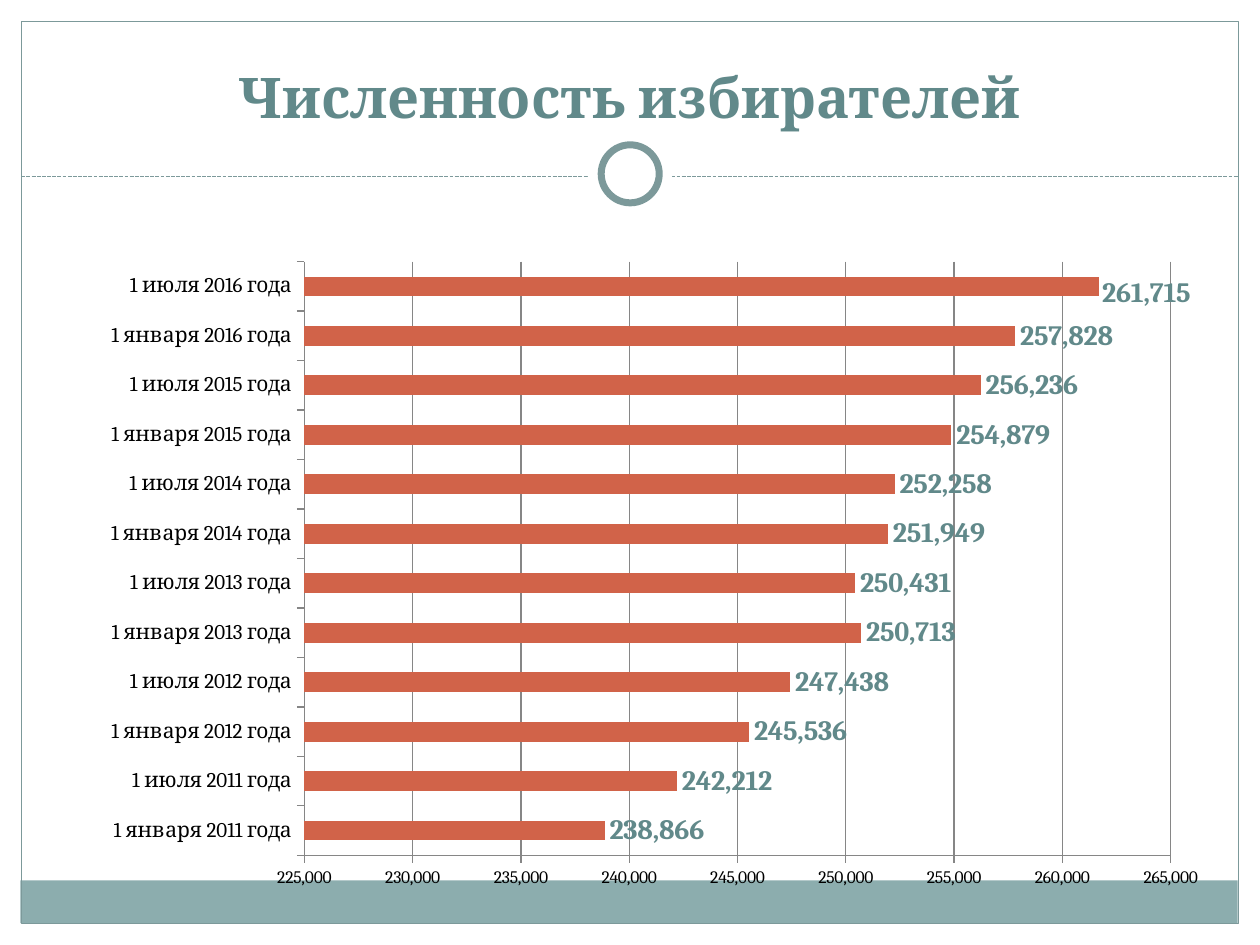
from lxml import etree
from pptx import Presentation
from pptx import util as u
from pptx.chart import data as cd
from pptx.dml import color as dc
from pptx.enum import chart as ec, dml, shapes, text
from pptx.oxml import ns

FONT = "Cambria"
WHITE, TEAL, BAND, EDGE = "FFFFFF", "61898A", "8CADAE", "7C999A"
BAR, GRID, BLACK = "D16349", "868686", "000000"

VOTERS = [238866, 242212, 245536, 247438, 250713, 250431,
          251949, 252258, 254879, 256236, 257828, 261715]
DATES = [f"1 {month} {year} года"
         for year in range(2011, 2017) for month in ("января", "июля")]


def rgb(code):
    return dc.RGBColor.from_string(code)


def style(font, size, color=BLACK, bold=False):
    font.name, font.size, font.bold = FONT, u.Pt(size), bold
    font.color.rgb = rgb(color)


def stroke(line, color, width=0.75):
    line.color.rgb = rgb(color)
    line.width = u.Pt(width)


def write(frame, words, align=text.PP_ALIGN.CENTER,
          anchor=text.MSO_ANCHOR.BOTTOM, **look):
    frame.word_wrap = True
    frame.auto_size = text.MSO_AUTO_SIZE.NONE
    frame.vertical_anchor = anchor
    para = frame.paragraphs[0]
    para.alignment = align
    run = para.add_run()
    run.text = words
    style(run.font, **look)


def shape(slide, kind, box, fill=None, line=None, width=0.75):
    item = slide.shapes.add_shape(kind, *map(u.Cm, box))
    item.shadow.inherit = False
    if fill:
        item.fill.solid()
        item.fill.fore_color.rgb = rgb(fill)
    else:
        item.fill.background()
    if line:
        stroke(item.line, line, width)
    else:
        item.line.fill.background()


def dash(slide, left, right, y):
    line = slide.shapes.add_connector(
        shapes.MSO_CONNECTOR.STRAIGHT, *map(u.Cm, (left, y, right, y)))
    stroke(line.line, EDGE)
    line.line.dash_style = dml.MSO_LINE.SQUARE_DOT
    etree.SubElement(line.element.spPr, ns.qn("a:effectLst"))


def frame(slide):
    rect, oval = shapes.MSO_SHAPE.RECTANGLE, shapes.MSO_SHAPE.OVAL
    for box in ((0, 0, 25.4, 3.86), (0, 0, 0.43, 19.05),
                (24.97, 0, 0.43, 19.05)):
        shape(slide, rect, box, WHITE)
    shape(slide, rect, (0.41, 17.75, 24.54, 0.86), BAND)
    shape(slide, rect, (0.43, 0.43, 24.54, 18.19), line=EDGE)
    dash(slide, 0.43, 24.97, 3.56)
    shape(slide, oval, (11.85, 2.67, 1.7, 1.7), WHITE)
    shape(slide, oval, (12.12, 2.92, 1.17, 1.17), WHITE, EDGE, 4)


def title(slide, words):
    """Fill the title and bring it in front of the frame."""
    item = slide.shapes.title
    item.left, item.top, item.width, item.height = map(
        u.Cm, (0.84, 0.64, 23.7, 2.11))
    write(item.text_frame, words, size=32, color=TEAL, bold=True)
    item.element.getparent().append(item.element)


def layout(parent, index, **parts):
    """Give a chart part a manual layout, as its child at index."""
    for old in parent.findall(ns.qn("c:layout")):
        parent.remove(old)
    node = etree.Element(ns.qn("c:layout"))
    manual = etree.SubElement(node, ns.qn("c:manualLayout"))
    for name, value in parts.items():
        etree.SubElement(manual, ns.qn("c:" + name)).set("val", str(value))
    parent.insert(index, node)


def axes(chart):
    cat, val = chart.category_axis, chart.value_axis
    for axis, size in ((cat, 12), (val, 10)):
        style(axis.tick_labels.font, size)
        axis.major_tick_mark = ec.XL_TICK_MARK.OUTSIDE
        axis.minor_tick_mark = ec.XL_TICK_MARK.NONE
        stroke(axis.format.line, GRID)
    cat.has_major_gridlines = False
    val.minimum_scale, val.maximum_scale = 225000, 265000
    val.major_unit = 5000
    val.tick_labels.number_format = "#,##0"
    val.tick_labels.number_format_is_linked = False
    val.has_major_gridlines = True
    stroke(val.major_gridlines.format.line, GRID)


def labels(plot):
    plot.has_data_labels = True
    marks = plot.series[0].data_labels
    marks.show_value = True
    marks.number_format = "#,##0"
    marks.number_format_is_linked = False
    marks.position = ec.XL_LABEL_POSITION.OUTSIDE_END
    style(marks.font, 16, TEAL, True)
    last = plot.series[0].points[len(VOTERS) - 1].data_label
    style(last.font, 16, TEAL, True)
    last.position = ec.XL_LABEL_POSITION.OUTSIDE_END
    node = marks._element.find(ns.qn("c:dLbl"))
    layout(node, 1, x=-0.002, y=0.01)


def bars(slide):
    data = cd.CategoryChartData(number_format="#,##0")
    data.categories = DATES
    data.add_series("Series 1", VOTERS)
    chart = slide.shapes.add_chart(
        ec.XL_CHART_TYPE.BAR_CLUSTERED,
        *map(u.Cm, (1.7, 4.45, 22.86, 13.54)), data).chart
    chart.has_legend = chart.has_title = False
    style(chart.font, 10)
    plot = chart.plots[0]
    plot.gap_width, plot.vary_by_categories = 150, False
    fill = plot.series[0].format.fill
    fill.solid()
    fill.fore_color.rgb = rgb(BAR)
    axes(chart)
    labels(plot)
    area = chart.element.find(".//" + ns.qn("c:plotArea"))
    layout(area, 0, layoutTarget="inner", xMode="edge", yMode="edge",
           x=0.194, y=0.061, w=0.764, h=0.884)


def main():
    deck = Presentation()
    deck.slide_width, deck.slide_height = u.Cm(25.4), u.Cm(19.05)
    slide = deck.slides.add_slide(deck.slide_layouts[5])
    frame(slide)
    title(slide, "Численность избирателей")
    bars(slide)
    deck.save("out.pptx")


if __name__ == "__main__":
    main()
